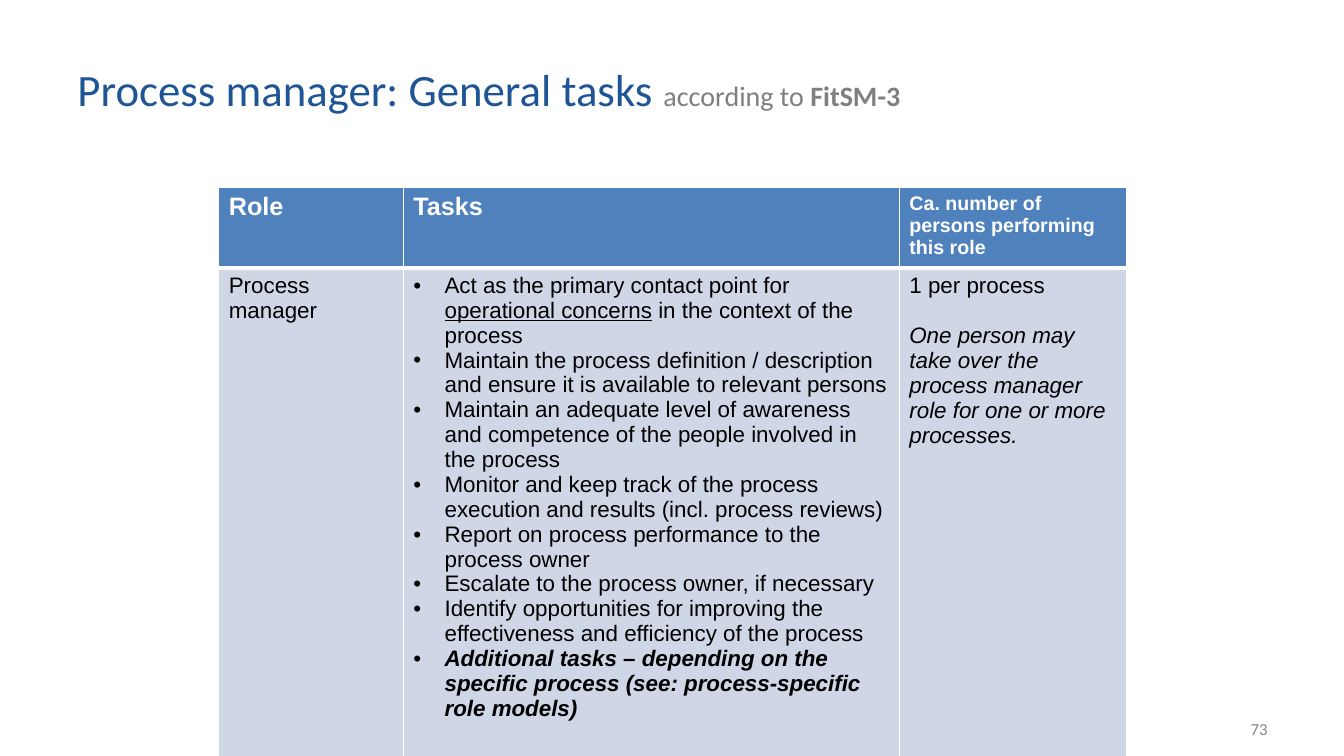
from lxml import etree
from pptx import Presentation
from pptx import util as u
from pptx.dml.color import RGBColor
from pptx.enum import text
from pptx.oxml.ns import qn

HEADS = [("Role", 18), ("Tasks", 18),
         ("Ca. number of persons performing this role", 14)]
TASKS = [
    [("Act as the primary contact point for ", ""),
     ("operational concerns", "u"),
     (" in the context of the process", "")],
    [("Maintain the process definition / description and ensure it is "
      "available to relevant persons", "")],
    [("Maintain an adequate level of awareness and competence of the people "
      "involved in the process", "")],
    [("Monitor and keep track of the process execution and results "
      "(incl. process reviews)", "")],
    [("Report on process performance to the process owner", "")],
    [("Escalate to the process owner, if necessary", "")],
    [("Identify opportunities for improving the effectiveness and efficiency "
      "of the process", "")],
    [("Additional tasks – depending on the specific process "
      "(see: process-specific role models)", "bi")],
]
COUNT = [
    [("1 per process", "")],
    [("One person may take over the process manager role for one or more "
      "processes.", "i")],
]


def color(code):
    return RGBColor.from_string(code)


class Deck:
    blue, pale, white, black = "4F81BD", "CFD7E7", "FFFFFF", "000000"

    def __init__(self, wide, high):
        self.file = Presentation()
        self.file.slide_width = u.Inches(wide)
        self.file.slide_height = u.Inches(high)
        self.slide = self.file.slides.add_slide(self.file.slide_layouts[6])

    def run(self, para, words, size, tint, face="Arial", marks=""):
        run = para.add_run()
        run.text = words
        font = run.font
        font.name, font.size = face, u.Pt(size)
        font.color.rgb = color(tint)
        font.bold, font.italic = "b" in marks, "i" in marks
        font.underline = "u" in marks

    def label(self, box, runs, align=text.PP_ALIGN.LEFT):
        frame = self.slide.shapes.add_textbox(*map(u.Inches, box)).text_frame
        frame.word_wrap = True
        frame.vertical_anchor = text.MSO_ANCHOR.MIDDLE
        para = frame.paragraphs[0]
        para.alignment = align
        for words, size, tint, marks in runs:
            self.run(para, words, size, tint, "Calibri", marks)

    def grid(self, left, top, cols, rows):
        table = self.slide.shapes.add_table(
            len(rows), len(cols), u.Inches(left), u.Inches(top),
            u.Inches(sum(cols)), u.Inches(sum(rows))).table
        for col, wide in zip(table.columns, cols):
            col.width = u.Inches(wide)
        for row, high in zip(table.rows, rows):
            row.height = u.Inches(high)
        return table

    def cell(self, cell, fill, paras, size, tint, bullet=False, gap=0):
        cell.fill.solid()
        cell.fill.fore_color.rgb = color(fill)
        frame = cell.text_frame
        for num, runs in enumerate(paras):
            para = frame.add_paragraph() if num else frame.paragraphs[0]
            if bullet:
                self.bullet(para)
            if num and gap:
                para.space_before = u.Pt(gap)
            for words, marks in runs:
                self.run(para, words, size, tint, marks=marks)

    def bullet(self, para):
        props = para._p.get_or_add_pPr()
        indent = u.Inches(0.31)
        props.set("marL", str(indent))
        props.set("indent", str(-indent))
        face = etree.SubElement(props, qn("a:buFont"))
        face.set("typeface", "Arial")
        etree.SubElement(props, qn("a:buChar")).set("char", "•")

    def border(self, cell, top, bottom):
        props = cell._tc.get_or_add_tcPr()
        sides = [("L", 1), ("R", 1), ("T", top), ("B", bottom)]
        for num, (side, width) in enumerate(sides):
            line = etree.Element(qn("a:ln" + side), w=str(u.Pt(width)))
            fill = etree.SubElement(line, qn("a:solidFill"))
            etree.SubElement(fill, qn("a:srgbClr")).set("val", self.white)
            props.insert(num, line)


def main():
    deck = Deck(13.33, 7.5)

    # Title
    deck.label((0.67, 0.3, 9.91, 1.15), [
        ("Process manager: General tasks ", 32, "205595", ""),
        ("according to ", 20, "7F7F7F", ""),
        ("FitSM-3", 20, "7F7F7F", "b")])

    # Role table: header row, then the role
    table = deck.grid(2.17, 1.86, [1.83, 4.92, 2.25], [0.75, 4.18])
    for col, (head, size) in enumerate(HEADS):
        deck.cell(table.cell(0, col), deck.blue, [[(head, "b")]],
                  size, deck.white)
    role, tasks, count = table.rows[1].cells
    deck.cell(role, deck.pale, [[("Process manager", "")]], 16, deck.black)
    deck.cell(tasks, deck.pale, TASKS, 16, deck.black, bullet=True)
    deck.cell(count, deck.pale, COUNT, 16, deck.black, gap=18)
    for row, (top, bottom) in enumerate([(1, 3), (3, 1)]):
        for cell in table.rows[row].cells:
            deck.border(cell, top, bottom)

    # Page number
    deck.label((9.56, 7.03, 3.11, 0.4), [("73", 12, "888888", "")],
               text.PP_ALIGN.RIGHT)

    deck.file.save("out.pptx")


if __name__ == "__main__":
    main()
